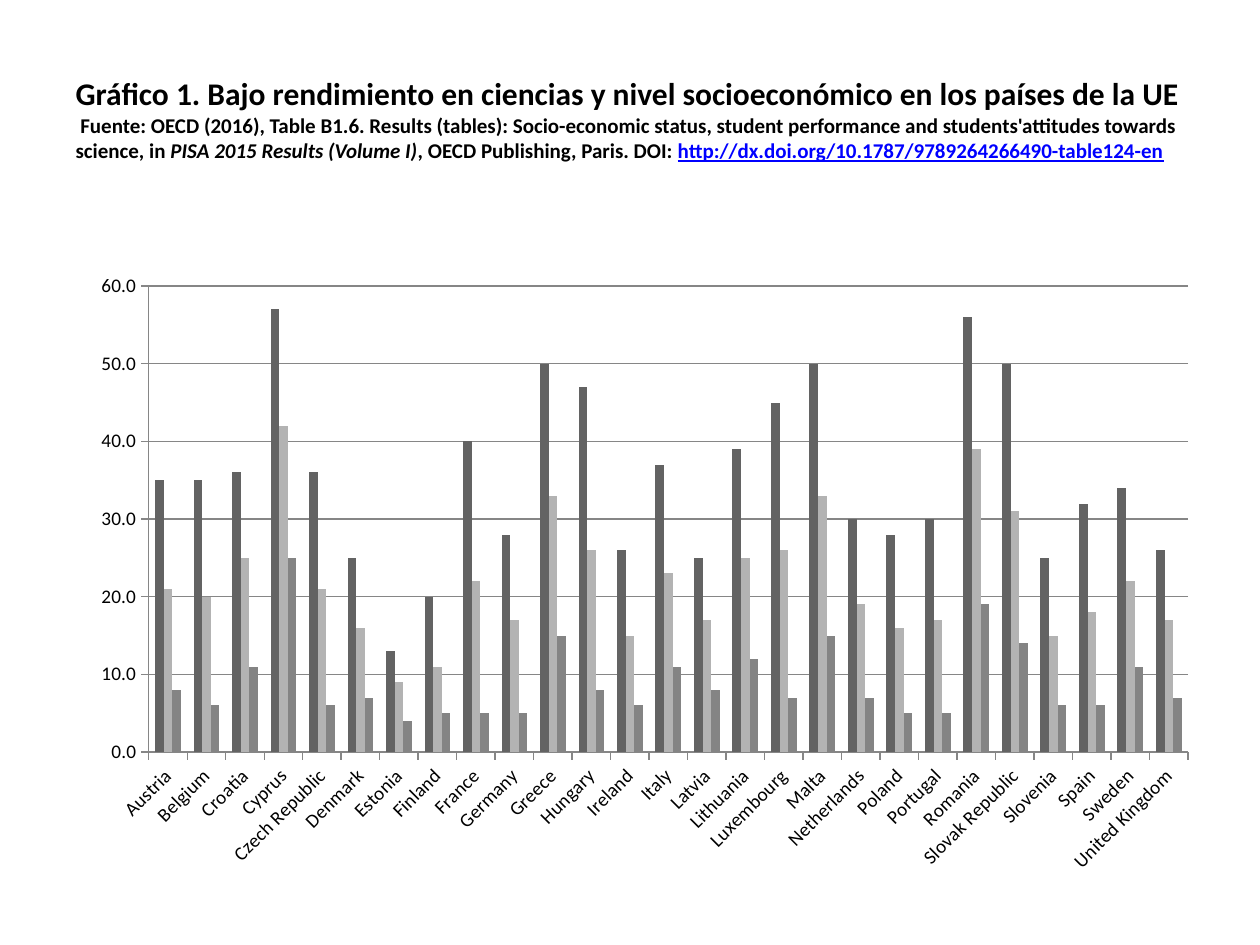
from copy import deepcopy
from lxml.etree import SubElement
from pptx import Presentation
from pptx.chart.data import CategoryChartData
from pptx.dml.color import RGBColor
from pptx.enum.chart import XL_CHART_TYPE, XL_TICK_MARK
from pptx.enum.text import MSO_ANCHOR, PP_ALIGN
from pptx.oxml.ns import qn
from pptx.util import Inches, Pt

FONT = "Calibri"
BLACK = RGBColor(0x00, 0x00, 0x00)
BLUE = RGBColor(0x00, 0x00, 0xFF)
RULE = RGBColor(0x86, 0x86, 0x86)
BARS = (RGBColor(0x63, 0x63, 0x63), RGBColor(0xB3, 0xB3, 0xB3),
        RGBColor(0x84, 0x84, 0x84))

# Country: share of low performers in each of the three groups
RATES = {
    "Austria": (35, 21, 8),
    "Belgium": (35, 20, 6),
    "Croatia": (36, 25, 11),
    "Cyprus": (57, 42, 25),
    "Czech Republic": (36, 21, 6),
    "Denmark": (25, 16, 7),
    "Estonia": (13, 9, 4),
    "Finland": (20, 11, 5),
    "France": (40, 22, 5),
    "Germany": (28, 17, 5),
    "Greece": (50, 33, 15),
    "Hungary": (47, 26, 8),
    "Ireland": (26, 15, 6),
    "Italy": (37, 23, 11),
    "Latvia": (25, 17, 8),
    "Lithuania": (39, 25, 12),
    "Luxembourg": (45, 26, 7),
    "Malta": (50, 33, 15),
    "Netherlands": (30, 19, 7),
    "Poland": (28, 16, 5),
    "Portugal": (30, 17, 5),
    "Romania": (56, 39, 19),
    "Slovak Republic": (50, 31, 14),
    "Slovenia": (25, 15, 6),
    "Spain": (32, 18, 6),
    "Sweden": (34, 22, 11),
    "United Kingdom": (26, 17, 7),
}


def write(para, text, size=12, color=BLACK, italic=False, line=False,
          wrap=False):
    """Add a run; wrap ends it with a line break of the same format."""
    run = para.add_run()
    run.text = text
    font = run.font
    font.name, font.size, font.bold = FONT, Pt(size), True
    font.italic, font.underline = italic, line
    font.color.rgb = color
    if wrap:
        para.add_line_break()
        para._p[-1].append(deepcopy(run._r.rPr))


def place(plot, **box):
    """Fix the inner plot area, as fractions of the chart."""
    old = plot.find(qn("c:layout"))
    if old is not None:
        plot.remove(old)
    layout = SubElement(plot, qn("c:layout"))
    plot.insert(0, layout)
    manual = SubElement(layout, qn("c:manualLayout"))
    parts = {"layoutTarget": "inner", "xMode": "edge", "yMode": "edge", **box}
    for name, value in parts.items():
        SubElement(manual, qn(f"c:{name}")).set("val", str(value))


class Deck:
    def __init__(self):
        self.prs = Presentation()
        self.prs.slide_width, self.prs.slide_height = Inches(10), Inches(7.5)
        self.slide = self.prs.slides.add_slide(self.prs.slide_layouts[5])

    def title(self, left, top, width, height):
        shape = self.slide.shapes.title
        shape.left, shape.top = Inches(left), Inches(top)
        shape.width, shape.height = Inches(width), Inches(height)
        frame = shape.text_frame
        frame.word_wrap = True
        frame.vertical_anchor = MSO_ANCHOR.MIDDLE
        frame.margin_bottom = Inches(0.34)
        para = frame.paragraphs[0]
        para.alignment = PP_ALIGN.LEFT
        write(para, "Gráfico 1. Bajo rendimiento en ciencias y nivel "
                    "socioeconómico en los países de la UE",
              size=18, wrap=True)
        write(para, " Fuente: OECD (2016), Table B1.6. Results (tables): "
                    "Socio-economic status, student performance and "
                    "students'attitudes towards science, in ")
        write(para, "PISA 2015 Results (Volume I)", italic=True)
        write(para, ", OECD Publishing, Paris. DOI: ")
        write(para, "http://dx.doi.org/10.1787/9789264266490-table124-en",
              color=BLUE, line=True)

    def chart(self, left, top, width, height):
        data = CategoryChartData(number_format="0.0")
        data.categories = list(RATES)
        for num, vals in enumerate(zip(*RATES.values()), 1):
            data.add_series(f"Series {num}", vals)
        chart = self.slide.shapes.add_chart(
            XL_CHART_TYPE.COLUMN_CLUSTERED, Inches(left), Inches(top),
            Inches(width), Inches(height), data).chart
        chart.has_legend = chart.has_title = False
        chart.font.name, chart.font.size = FONT, Pt(11)
        chart.font.color.rgb = BLACK
        plot = chart.plots[0]
        plot.gap_width, plot.overlap = 150, 0
        plot.vary_by_categories = False
        for series, color in zip(plot.series, BARS):
            series.format.fill.solid()
            series.format.fill.fore_color.rgb = color
        self.axes(chart)
        place(chart._chartSpace.chart.plotArea, x=0.56 / width,
              y=0.19 / height, w=8.25 / width, h=3.7 / height)

    def axes(self, chart):
        cat, val = chart.category_axis, chart.value_axis
        for axis in (cat, val):
            axis.major_tick_mark = XL_TICK_MARK.OUTSIDE
            axis.minor_tick_mark = XL_TICK_MARK.NONE
            axis.format.line.color.rgb = RULE
            axis.tick_labels.font.size = Pt(11)
        cat._element.txPr.find(qn("a:bodyPr")).set("rot", "-2700000")
        val.minimum_scale, val.maximum_scale, val.major_unit = 0, 60, 10
        val.has_major_gridlines = True
        val.major_gridlines.format.line.color.rgb = RULE
        val.tick_labels.number_format = "0.0"
        val.tick_labels.number_format_is_linked = False


def main():
    deck = Deck()
    deck.title(0.5, 0.3, 9, 1.57)
    deck.chart(0.62, 2.08, 8.98, 4.96)
    deck.prs.save("out.pptx")


if __name__ == "__main__":
    main()
